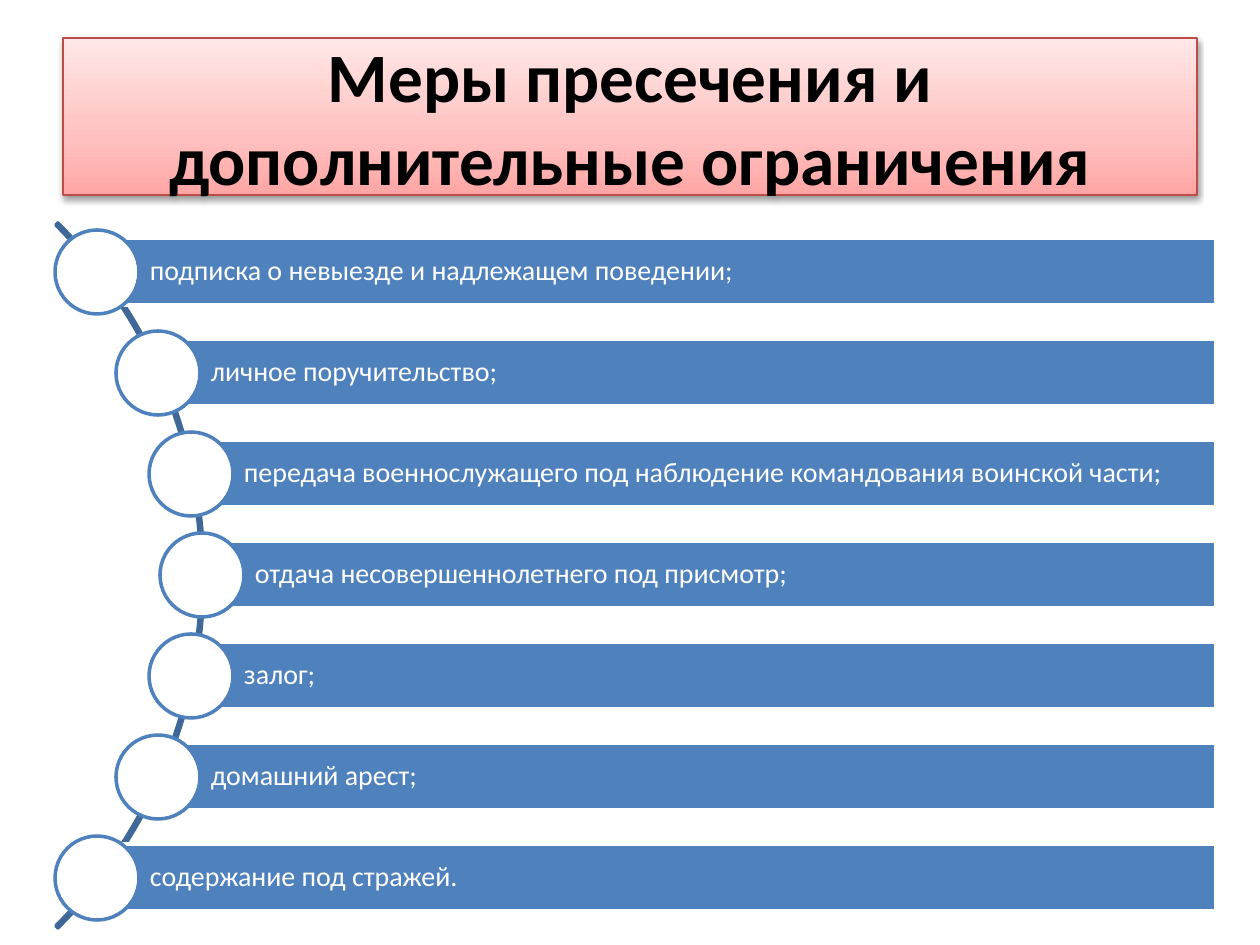
from copy import deepcopy
from dataclasses import dataclass

from lxml import etree
from pptx import Presentation
from pptx.dml.color import RGBColor
from pptx.enum.shapes import MSO_SHAPE
from pptx.enum.text import MSO_ANCHOR, PP_ALIGN
from pptx.oxml.ns import qn
from pptx.shapes.autoshape import Shape
from pptx.slide import Slide
from pptx.util import Emu, Pt

RECTANGLE = MSO_SHAPE.RECTANGLE
OVAL = MSO_SHAPE.OVAL
BLOCK_ARC = MSO_SHAPE.BLOCK_ARC
MIDDLE = MSO_ANCHOR.MIDDLE
LEFT = PP_ALIGN.LEFT
CENTER = PP_ALIGN.CENTER

EMU_PER_PX = 914400 / 126
FONT = "Calibri"
COLORS = {
    "white": "FFFFFF",
    "black": "000000",
    "bar": "4F81BD",
    "arc": "3F6797",
    "title_line": "BF4C48",
}
TITLE_GRADIENT = ((0, "FFA6A5"), (0.35, "FFC0BF"), (1, "FFE7E7"))

BAR_TOP = 238
BAR_PITCH = 101
BAR_HEIGHT = 67
BAR_RIGHT = 1216
CIRCLE_SIZE = 84


@dataclass(frozen=True)
class Measure:
    text: str
    left: int


MEASURES = (
    Measure("подписка о невыезде и надлежащем поведении;", 97),
    Measure("личное поручительство;", 158),
    Measure("передача военнослужащего под наблюдение командования воинской части;", 191),
    Measure("отдача несовершеннолетнего под присмотр;", 202),
    Measure("залог;", 191),
    Measure("домашний арест;", 158),
    Measure("содержание под стражей.", 97),
)


def px(length: int) -> Emu:
    return Emu(round(length * EMU_PER_PX))


def color(name: str) -> RGBColor:
    return RGBColor.from_string(COLORS[name])


def add_outlined_shape(slide: Slide, kind: MSO_SHAPE, left: int, top: int,
                       width: int, height: int, *, line: str,
                       line_width: float = 2, fill: str | None = None) -> Shape:
    shape = slide.shapes.add_shape(kind, px(left), px(top), px(width), px(height))
    shape.shadow.inherit = False
    if fill:
        shape.fill.solid()
        shape.fill.fore_color.rgb = color(fill)
    else:
        shape.fill.background()
    shape.line.color.rgb = color(line)
    shape.line.width = Pt(line_width)
    return shape


def write_text(shape: Shape, text: str, *, size: float, font_color: str,
               bold: bool = False, align: PP_ALIGN = LEFT,
               line_spacing: float = 1.0,
               margins: tuple[int, int, int, int] = (13, 6, 13, 6)) -> None:
    frame = shape.text_frame
    frame.word_wrap = True
    frame.vertical_anchor = MIDDLE
    (frame.margin_left, frame.margin_top,
     frame.margin_right, frame.margin_bottom) = map(px, margins)
    paragraph = frame.paragraphs[0]
    paragraph.alignment = align
    paragraph.line_spacing = line_spacing
    run = paragraph.add_run()
    run.text = text
    run.font.name = FONT
    run.font.size = Pt(size)
    run.font.bold = bold
    run.font.color.rgb = color(font_color)


def apply_title_gradient(shape: Shape) -> None:
    shape.fill.gradient()
    shape.fill.gradient_angle = 90
    stop_list = shape._element.spPr.find(qn("a:gradFill")).find(qn("a:gsLst"))
    stop_list.append(deepcopy(stop_list[0]))
    for stop, (position, value) in zip(shape.fill.gradient_stops, TITLE_GRADIENT):
        stop.position = position
        stop.color.rgb = RGBColor.from_string(value)


def apply_title_shadow(shape: Shape) -> None:
    effects = shape._element.spPr.find(qn("a:effectLst"))
    shadow = etree.SubElement(effects, qn("a:outerShdw"), blurRad="40000",
                              dist="20000", dir="5400000", rotWithShape="0")
    shadow_color = etree.SubElement(shadow, qn("a:srgbClr"), val=COLORS["black"])
    etree.SubElement(shadow_color, qn("a:alpha"), val="38000")


def add_title(slide: Slide) -> None:
    title = add_outlined_shape(slide, RECTANGLE, 63, 38, 1134, 157,
                               line="title_line", line_width=0.75)
    apply_title_gradient(title)
    apply_title_shadow(title)
    write_text(title, "Меры пресечения и дополнительные ограничения",
               size=39.6, font_color="black", bold=True, align=CENTER)


def add_arc(slide: Slide) -> None:
    arc = add_outlined_shape(slide, BLOCK_ARC, -793, 77, 997, 997, line="arc")
    for index, value in enumerate((189, 27, 0.003)):
        arc.adjustments[index] = value


def add_measure(slide: Slide, measure: Measure, top: int) -> None:
    bar = add_outlined_shape(slide, RECTANGLE, measure.left, top,
                             BAR_RIGHT - measure.left, BAR_HEIGHT,
                             line="white", fill="bar")
    write_text(bar, measure.text, size=16, font_color="white",
               line_spacing=0.9, margins=(53, 5, 5, 5))
    add_outlined_shape(slide, OVAL, measure.left - CIRCLE_SIZE // 2,
                       top - (CIRCLE_SIZE - BAR_HEIGHT) // 2,
                       CIRCLE_SIZE, CIRCLE_SIZE, line="bar", fill="white")


def main() -> None:
    presentation = Presentation()
    presentation.slide_width = px(1260)
    presentation.slide_height = px(945)
    slide = presentation.slides.add_slide(presentation.slide_layouts[6])
    add_title(slide)
    add_arc(slide)
    for index, measure in enumerate(MEASURES):
        add_measure(slide, measure, BAR_TOP + index * BAR_PITCH)
    presentation.save("out.pptx")


if __name__ == "__main__":
    main()
